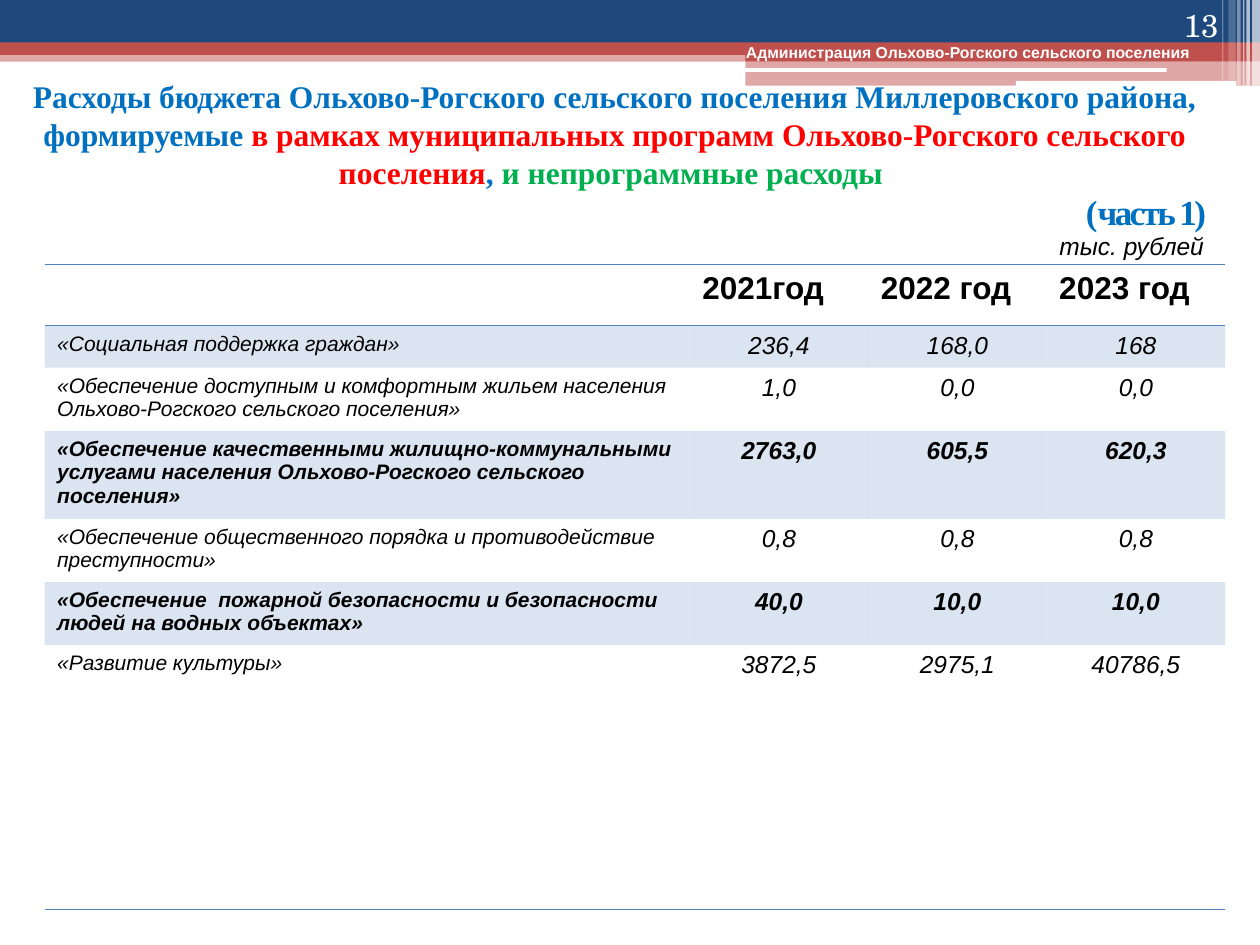
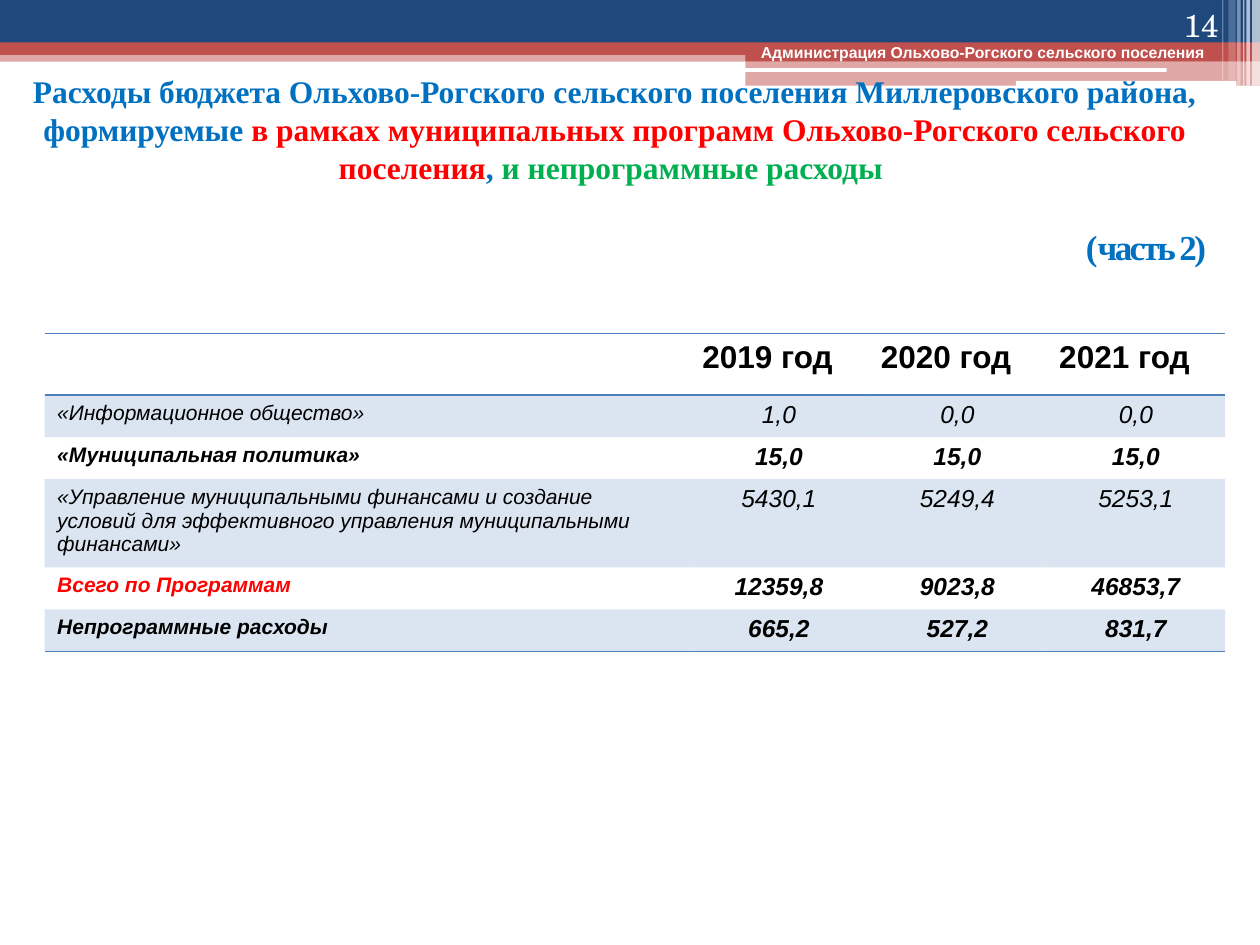
from lxml.etree import SubElement
from pptx import Presentation
from pptx.dml.color import RGBColor
from pptx.enum.shapes import MSO_SHAPE as Preset
from pptx.enum.text import MSO_ANCHOR as Anchor, PP_ALIGN as Align
from pptx.oxml import parse_xml
from pptx.oxml.ns import nsdecls, qn
from pptx.util import Pt

COLORS = {
    "navy": "1F497D", "brick": "C0504D", "white": "FFFFFF", "black": "000000",
    "blue": "0070C0", "red": "FF0000", "green": "00B050", "steel": "4F81BD",
}
BANDS = [
    (0, 28.8, 720, 6.5, "brick", 50),
    (0, 0, 720, 24.5, "navy", 100),
    (0, 24.2, 720, 7.2, "brick", 100),
    (426, 28, 294, 7, "brick", 100),
    (426, 35, 294, 14, "brick", 50),
]
PILLS = [(425.5, 38.9, 241.2, 2.2), (580.5, 46.3, 126, 2.9)]
STRIPES = [
    (715.5, 4.5, 49, 65), (712.2, 2, 49, 65), (710.4, 0.7, 49, 60),
    (707, 2, 49, 40), (702, 4.2, 46, 20), (698.4, 0.7, 46, 30),
]
TITLE = [
    ("Расходы бюджета Ольхово-Рогского сельского поселения Миллеровского района, формируемые ", "blue"),
    ("в рамках муниципальных программ Ольхово-Рогского сельского поселения", "red"),
    (", ", "blue"),
    ("и непрограммные расходы ", "green"),
]
COLUMN_WIDTHS = [368.6, 102, 102, 102]
HEADER_HEIGHT = 35.1
ROW_HEIGHTS = {1: 23.1, 2: 34.1, 3: 47.4}
NO_STYLE = "{2D5ABB26-0587-4C30-8999-92F81FD0307C}"

PROGRAMS_ONE = [
    ("«Социальная поддержка граждан»", "236,4 168,0 168", 1, False),
    ("«Обеспечение доступным и комфортным жильем населения Ольхово-Рогского сельского поселения»",
     "1,0 0,0 0,0", 2, False),
    ("«Обеспечение качественными жилищно-коммунальными услугами населения Ольхово-Рогского сельского поселения»",
     "2763,0 605,5 620,3", 3, True),
    ("«Обеспечение общественного порядка и противодействие преступности»", "0,8 0,8 0,8", 2, False),
    ("«Обеспечение  пожарной безопасности и безопасности людей на водных объектах»",
     "40,0 10,0 10,0", 2, True),
    ("«Развитие культуры»", "3872,5 2975,1 40786,5", 1, False),
]
PROGRAMS_TWO = [
    ("«Информационное общество»", "1,0 0,0 0,0", 1, False),
    ("«Муниципальная политика»", "15,0 15,0 15,0", 1, True),
    ("«Управление муниципальными финансами и создание условий для эффективного управления муниципальными финансами»",
     "5430,1 5249,4 5253,1", 3, False),
    ("Всего по Программам", "12359,8 9023,8 46853,7", 1, True),
    ("Непрограммные расходы", "665,2 527,2 831,7", 1, True),
]


def rgb(name):
    """Return the named colour."""
    return RGBColor.from_string(COLORS[name])


def paint(fill, color, opacity=100):
    """Give a fill one colour and an opacity in percent."""
    fill.solid()
    fill.fore_color.rgb = rgb(color)
    if opacity < 100:
        tone = fill._xPr.find(qn("a:solidFill"))[0]
        SubElement(tone, qn("a:alpha"), val=str(opacity * 1000))


def set_font(font, size, color="black", name="Arial", bold=False, italic=False):
    """Set the look of a paragraph or a run."""
    font.size, font.name, font.bold, font.italic = Pt(size), name, bold, italic
    font.color.rgb = rgb(color)


def add_block(page, left, top, width, height, color, opacity=100, preset=Preset.RECTANGLE):
    """Add a plain filled shape without an outline."""
    block = page.shapes.add_shape(preset, Pt(left), Pt(top), Pt(width), Pt(height))
    block.shadow.inherit = False
    block.line.fill.background()
    paint(block.fill, color, opacity)


def add_box(page, left, top, width, height, anchor=Anchor.TOP):
    """Add a wrapping text box and return its frame."""
    frame = page.shapes.add_textbox(Pt(left), Pt(top), Pt(width), Pt(height)).text_frame
    frame.word_wrap = True
    frame.vertical_anchor = anchor
    return frame


def add_label(page, text, place, size, align=Align.LEFT, anchor=Anchor.TOP, **look):
    """Add a text box holding one paragraph."""
    para = add_box(page, *place, anchor).paragraphs[0]
    para.text, para.alignment = text, align
    set_font(para.font, size, **look)


def add_header(page, number, owner_left):
    """Add the coloured bands, the owner's name and the page number."""
    for band in BANDS:
        add_block(page, *band)
    for pill in PILLS:
        add_block(page, *pill, "white", preset=Preset.ROUNDED_RECTANGLE)
    for left, width, height, opacity in STRIPES:
        add_block(page, left, 0, width, height, "white", opacity)
    add_label(page, "Администрация Ольхово-Рогского сельского поселения",
              (owner_left, 20.9, 272.2, 18), 9, color="white", bold=True)
    add_label(page, str(number), (643.7, 0, 59.8, 28.8), 18, Align.RIGHT, Anchor.BOTTOM,
              color="white", name="TeX Gyre Schola")


def add_title(page, part, top, height, gap):
    """Add the three-colour title with the part number below it."""
    frame = add_box(page, 0, top, 702.7, height, Anchor.MIDDLE)
    para = frame.paragraphs[0]
    para.alignment = Align.CENTER
    for text, color in TITLE:
        span = para.add_run()
        span.text = text
        set_font(span.font, 18, color, "Times New Roman", bold=True)
    para = frame.add_paragraph()
    para.space_before = Pt(gap)
    para._p.get_or_add_pPr().set("marL", str(Pt(613.5)))
    for text, spacing in [("(", 0), (f"часть {part})", -150)]:
        span = para.add_run()
        span.text = text
        set_font(span.font, 20, "blue", "Times New Roman", bold=True)
        span.font._element.set("spc", str(spacing))


def add_border(cell, side):
    """Draw a thin line along one side of a cell."""
    cell._tc.get_or_add_tcPr().insert(0, parse_xml(
        f'<a:{side} {nsdecls("a")} w="12700"><a:solidFill>'
        f'<a:srgbClr val="{COLORS["steel"]}"/></a:solidFill></a:{side}>'))


def write_cell(cell, text, size, align=Align.LEFT, **look):
    """Fill one cell with a paragraph."""
    para = cell.text_frame.paragraphs[0]
    para.text, para.alignment = text, align
    set_font(para.font, size, **look)


def add_budget(page, top, years, programs, last_height):
    """Add the table of programme spending by year."""
    heights = [HEADER_HEIGHT] + [ROW_HEIGHTS[lines] for _, _, lines, _ in programs]
    heights[-1] = last_height
    table = page.shapes.add_table(len(heights), len(COLUMN_WIDTHS), Pt(25.5), Pt(top),
                                  Pt(sum(COLUMN_WIDTHS)), Pt(sum(heights))).table
    table.first_row = table.horz_banding = False
    table._tbl.tblPr.find(qn("a:tableStyleId")).text = NO_STYLE
    for column, width in zip(table.columns, COLUMN_WIDTHS):
        column.width = Pt(width)
    for row, height in zip(table.rows, heights):
        row.height = Pt(height)
    for column, year in enumerate(years, 1):
        write_cell(table.cell(0, column), year, 18, bold=True)
    for row, (program, amounts, _, bold) in enumerate(programs, 1):
        color = "red" if program.startswith("Всего") else "black"
        write_cell(table.cell(row, 0), program, 12, color=color, bold=bold, italic=True)
        for column, amount in enumerate(amounts.split(), 1):
            write_cell(table.cell(row, column), amount, 14, Align.CENTER, bold=bold, italic=True)
    for row, cells in enumerate(table.rows):
        for cell in cells.cells:
            if row % 2:
                paint(cell.fill, "steel", 20)
            else:
                cell.fill.background()
            if row in (0, len(programs)):
                add_border(cell, "lnB")
            if row == 0:
                add_border(cell, "lnT")


def main():
    """Build both budget pages and save them."""
    deck = Presentation()
    deck.slide_width, deck.slide_height = Pt(720), Pt(540)
    blank = deck.slide_layouts[6]

    page = deck.slides.add_slide(blank)
    add_header(page, 13, 419.2)
    add_title(page, 1, 43.2, 90.7, 0)
    add_budget(page, 151, ["2021год", "2022 год", "2023 год"], PROGRAMS_ONE, 151)
    add_label(page, "тыс. рублей", (598.3, 128.2, 102.2, 24.5), 14, italic=True)

    page = deck.slides.add_slide(blank)
    add_header(page, 14, 427.7)
    add_title(page, 2, 49, 96.5, 23)
    add_budget(page, 190.6, ["2019 год", "2020 год", "2021 год"], PROGRAMS_TWO, ROW_HEIGHTS[1])

    deck.save("out.pptx")


if __name__ == "__main__":
    main()
